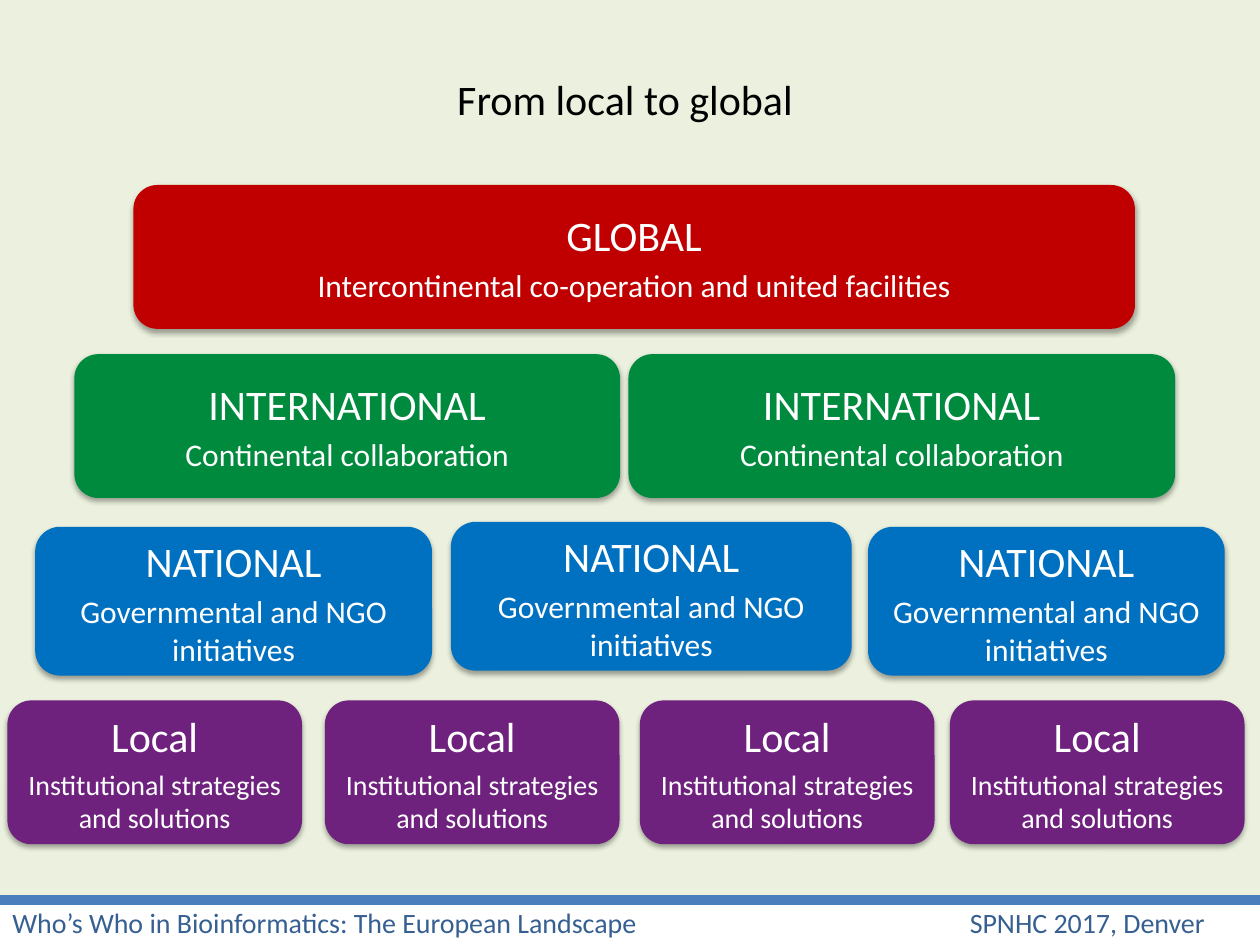
import pptx
import pptx.dml.color
import pptx.enum.shapes
import pptx.enum.text
import pptx.oxml
import pptx.oxml.ns
import pptx.util
from lxml import etree

Cm = pptx.util.Cm
Pt = pptx.util.Pt
ALIGN = pptx.enum.text.PP_ALIGN
SHAPE = pptx.enum.shapes.MSO_SHAPE
FONT = "Calibri"
SLIDE_WIDTH, SLIDE_HEIGHT = 25.4, 19.05
BODY_HEIGHT = 18.14

COLORS = {
    "background": "EBF1DE",
    "global": "C00000",
    "international": "008A3E",
    "national": "0070C0",
    "local": "6E217D",
    "rule": "4B7EBC",
    "footer": "376092",
    "title": "000000",
    "white": "FFFFFF",
}

# Each box is (left, top, width, height) in centimetres.
LEVELS = [
    ("global", "GLOBAL", ["Intercontinental co-operation and united facilities"], 18,
     [(2.69, 3.73, 20.19, 2.9)]),
    ("international", "INTERNATIONAL", ["Continental collaboration"], 18,
     [(1.5, 7.14, 11, 2.9), (12.67, 7.14, 11.02, 2.9)]),
    ("national", "NATIONAL", ["Governmental and NGO initiatives"], 18,
     [(0.71, 10.62, 8, 3), (9.09, 10.52, 8.08, 3), (17.5, 10.62, 7.19, 3)]),
    ("local", "Local", ["Institutional strategies", "and solutions"], 16,
     [(left, 14.12, 5.94, 2.9) for left in (0.15, 6.55, 12.9, 19.15)]),
]


def rgb(name):
    return pptx.dml.color.RGBColor.from_string(COLORS[name])


def write_text(frame, text, size=18, color="white", align=ALIGN.CENTER,
               space_before=0, first=True):
    """Fill the first paragraph of the frame, or append one, and return it."""
    paragraph = frame.paragraphs[0] if first else frame.add_paragraph()
    paragraph.alignment = align
    paragraph.space_before = Pt(space_before)
    run = paragraph.add_run()
    run.text = text
    run.font.name = FONT
    run.font.size = Pt(size)
    run.font.color.rgb = rgb(color)
    return paragraph


def add_text_box(slide, box):
    frame = slide.shapes.add_textbox(*map(Cm, box)).text_frame
    frame.word_wrap = True
    return frame


def add_filled_shape(slide, kind, box, color):
    shape = slide.shapes.add_shape(kind, *map(Cm, box))
    shape.shadow.inherit = False
    shape.fill.solid()
    shape.fill.fore_color.rgb = rgb(color)
    shape.line.fill.background()
    return shape


def add_soft_shadow(shape):
    effects = shape._element.spPr.find(pptx.oxml.ns.qn("a:effectLst"))
    effects.append(pptx.oxml.parse_xml(
        f'<a:outerShdw {pptx.oxml.ns.nsdecls("a")} blurRad="{Pt(3.1)}" '
        f'dist="{Pt(1.8)}" dir="5400000" rotWithShape="0">'
        '<a:srgbClr val="000000"><a:alpha val="35000"/></a:srgbClr></a:outerShdw>'))


def add_level_box(slide, box, color, heading, details, detail_size):
    shape = add_filled_shape(slide, SHAPE.ROUNDED_RECTANGLE, box, color)
    add_soft_shadow(shape)
    frame = shape.text_frame
    frame.word_wrap = True
    frame.vertical_anchor = pptx.enum.text.MSO_ANCHOR.MIDDLE
    write_text(frame, heading, size=24)
    for index, detail in enumerate(details):
        write_text(frame, detail, size=detail_size, first=False,
                   space_before=0 if index else 3.6)


def add_pyramid(slide):
    for color, heading, details, detail_size, boxes in LEVELS:
        for box in boxes:
            add_level_box(slide, box, color, heading, details, detail_size)


def add_title(slide, box):
    write_text(add_text_box(slide, box), "From local to global", size=24, color="title")


def add_footer(slide, box):
    left, top, width, _ = box
    rule = slide.shapes.add_connector(
        pptx.enum.shapes.MSO_CONNECTOR.STRAIGHT,
        Cm(left), Cm(top), Cm(left + width), Cm(top))
    rule.line.color.rgb = rgb("rule")
    rule.line.width = Pt(5.5)
    etree.SubElement(rule._element.spPr, pptx.oxml.ns.qn("a:effectLst"))

    paragraph = write_text(
        add_text_box(slide, box),
        "Who’s Who in Bioinformatics: The European Landscape\tSPNHC 2017, Denver",
        size=16, color="footer", align=ALIGN.LEFT)
    properties = paragraph._p.get_or_add_pPr()
    tabs = etree.SubElement(properties, pptx.oxml.ns.qn("a:tabLst"))
    etree.SubElement(tabs, pptx.oxml.ns.qn("a:tab"), pos=str(Cm(19.3)), algn="l")


def main():
    presentation = pptx.Presentation()
    presentation.slide_width = Cm(SLIDE_WIDTH)
    presentation.slide_height = Cm(SLIDE_HEIGHT)
    slide = presentation.slides.add_slide(presentation.slide_layouts[6])
    add_filled_shape(slide, SHAPE.RECTANGLE, (0, 0, SLIDE_WIDTH, BODY_HEIGHT), "background")
    add_title(slide, (1.5, 1.35, 22.2, 1.27))
    add_pyramid(slide)
    add_footer(slide, (0, BODY_HEIGHT, SLIDE_WIDTH, SLIDE_HEIGHT - BODY_HEIGHT))
    presentation.save("out.pptx")


if __name__ == "__main__":
    main()
